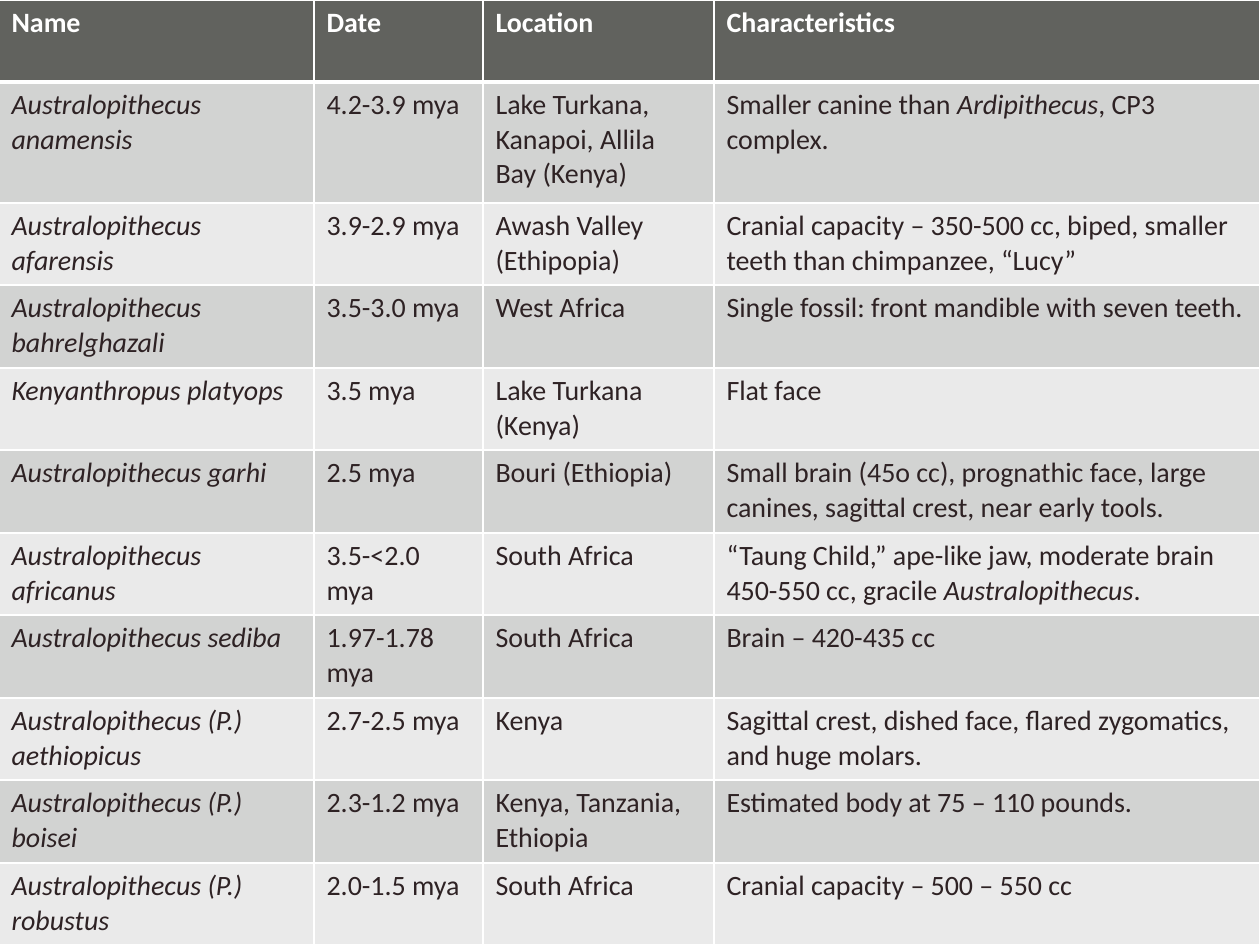
from dataclasses import dataclass

from lxml.etree import SubElement
from pptx import Presentation
from pptx.dml.color import RGBColor
from pptx.oxml.ns import qn
from pptx.util import Pt

EMU_PER_PX = 914400 / 126
SLIDE_WIDTH, SLIDE_HEIGHT = 1260, 945
TABLE_LEFT = -1
COLUMN_WIDTHS = [315, 169, 231, 546]
HEADER_HEIGHT, FIRST_SPECIES_HEIGHT = 82, 121


@dataclass(frozen=True)
class Theme:
    font: str = "Calibri"
    text_size: int = 16
    header_fill: str = "61625E"
    header_text: str = "FFFFFF"
    body_text: str = "2E2224"
    bands: tuple = ("D2D3D2", "EAEAEA")
    border: str = "FFFFFF"
    thin: int = 1
    thick: int = 3


THEME = Theme()

HEADERS = ["Name", "Date", "Location", "Characteristics"]

# Asterisks enclose italic words
SPECIES = [
    ("*Australopithecus anamensis*", "4.2-3.9 mya",
     "Lake Turkana, Kanapoi, Allila Bay (Kenya)",
     "Smaller canine than *Ardipithecus*, CP3 complex."),
    ("*Australopithecus afarensis*", "3.9-2.9 mya", "Awash Valley (Ethipopia)",
     "Cranial capacity – 350-500 cc, biped, smaller teeth than chimpanzee, “Lucy”"),
    ("*Australopithecus bahrelghazali*", "3.5-3.0 mya", "West Africa",
     "Single fossil: front mandible with seven teeth."),
    ("*Kenyanthropus platyops*", "3.5 mya", "Lake Turkana (Kenya)", "Flat face"),
    ("*Australopithecus garhi*", "2.5 mya", "Bouri (Ethiopia)",
     "Small brain (45o cc), prognathic face, large canines, sagittal crest, "
     "near early tools."),
    ("*Australopithecus africanus*", "3.5-<2.0 mya", "South Africa",
     "“Taung Child,” ape-like jaw, moderate brain 450-550 cc, gracile "
     "*Australopithecus*."),
    ("*Australopithecus sediba*", "1.97-1.78 mya", "South Africa",
     "Brain – 420-435 cc"),
    ("*Australopithecus (P.) aethiopicus*", "2.7-2.5 mya", "Kenya",
     "Sagittal crest, dished face, flared zygomatics, and huge molars."),
    ("*Australopithecus (P.) boisei*", "2.3-1.2 mya", "Kenya, Tanzania, Ethiopia",
     "Estimated body at 75 – 110 pounds."),
    ("*Australopithecus (P.) robustus*", "2.0-1.5 mya", "South Africa",
     "Cranial capacity – 500 – 550 cc"),
]


def px(length):
    return round(length * EMU_PER_PX)


def row_heights():
    """Header and first species are fixed; the others share what remains."""
    top = HEADER_HEIGHT + FIRST_SPECIES_HEIGHT
    count = len(SPECIES) - 1
    edges = [round((SLIDE_HEIGHT - top) * i / count) for i in range(count + 1)]
    shared = [below - above for above, below in zip(edges, edges[1:])]
    return [HEADER_HEIGHT, FIRST_SPECIES_HEIGHT, *shared]


def set_borders(cell, top, bottom):
    widths = {"a:lnL": THEME.thin, "a:lnR": THEME.thin, "a:lnT": top, "a:lnB": bottom}
    properties = cell._tc.get_or_add_tcPr()
    for tag, width in widths.items():
        line = SubElement(properties, qn(tag), w=str(Pt(width)))
        fill = SubElement(line, qn("a:solidFill"))
        SubElement(fill, qn("a:srgbClr"), val=THEME.border)


def write_text(cell, text, color, bold):
    paragraph = cell.text_frame.paragraphs[0]
    for index, part in enumerate(text.split("*")):
        if not part:
            continue
        run = paragraph.add_run()
        run.text = part
        font_format = {"name": THEME.font, "size": Pt(THEME.text_size),
                       "bold": bold, "italic": index % 2 == 1}
        for name, value in font_format.items():
            setattr(run.font, name, value)
        run.font.color.rgb = RGBColor.from_string(color)


def fill_row(table, row, texts):
    is_header = row == 0
    fill = THEME.header_fill if is_header else THEME.bands[(row - 1) % 2]
    color = THEME.header_text if is_header else THEME.body_text
    top = THEME.thick if row == 1 else THEME.thin
    bottom = THEME.thick if is_header else THEME.thin
    for column, text in enumerate(texts):
        cell = table.cell(row, column)
        set_borders(cell, top, bottom)
        cell.fill.solid()
        cell.fill.fore_color.rgb = RGBColor.from_string(fill)
        write_text(cell, text, color, is_header)


def add_species_table(slide):
    rows = [HEADERS, *SPECIES]
    frame = slide.shapes.add_table(
        len(rows), len(HEADERS), px(TABLE_LEFT), 0,
        px(sum(COLUMN_WIDTHS)), px(SLIDE_HEIGHT))
    table = frame.table
    for column, width in zip(table.columns, COLUMN_WIDTHS):
        column.width = px(width)
    for row, height in zip(table.rows, row_heights()):
        row.height = px(height)
    for row, texts in enumerate(rows):
        fill_row(table, row, texts)


def main():
    presentation = Presentation()
    presentation.slide_width = px(SLIDE_WIDTH)
    presentation.slide_height = px(SLIDE_HEIGHT)
    slide = presentation.slides.add_slide(presentation.slide_layouts[6])
    # Table of hominin species, filling the slide
    add_species_table(slide)
    presentation.save("out.pptx")


if __name__ == "__main__":
    main()
